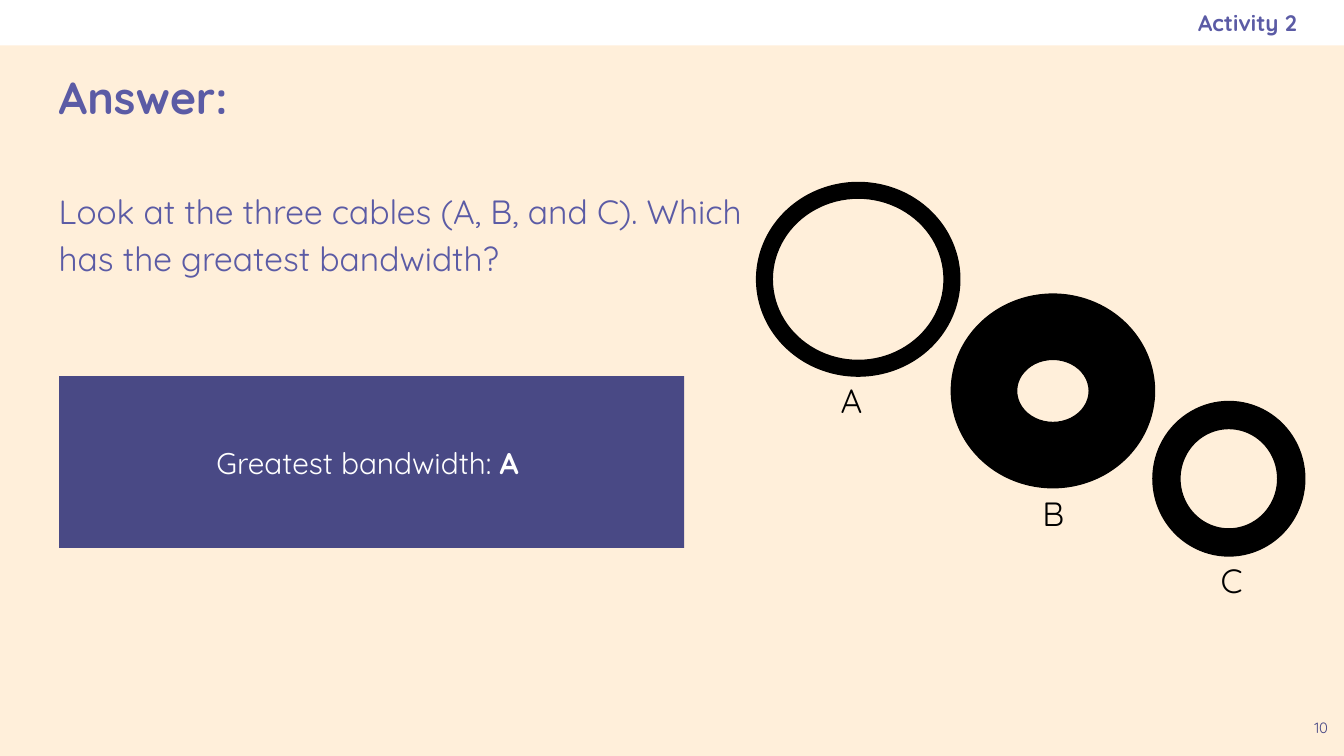
from dataclasses import dataclass

from pptx import Presentation
from pptx.dml.color import RGBColor
from pptx.enum.shapes import MSO_SHAPE
from pptx.enum.text import MSO_ANCHOR, PP_ALIGN
from pptx.util import Cm, Pt

RECTANGLE, DONUT = MSO_SHAPE.RECTANGLE, MSO_SHAPE.DONUT
TOP, MIDDLE = MSO_ANCHOR.TOP, MSO_ANCHOR.MIDDLE
LEFT, CENTER, RIGHT = PP_ALIGN.LEFT, PP_ALIGN.CENTER, PP_ALIGN.RIGHT


@dataclass(frozen=True)
class Theme:
    font: str = "Quicksand"
    cream: str = "FFEFDA"
    white: str = "FFFFFF"
    black: str = "000000"
    violet: str = "5B5BA5"
    indigo: str = "494985"
    title_size: int = 24
    body_size: int = 18
    answer_size: int = 16
    header_size: int = 12
    number_size: int = 8


class SlideBuilder:
    """Holds the theme and the current slide."""

    def __init__(self, slide, theme):
        self.slide = slide
        self.theme = theme
        background = slide.background.fill
        background.solid()
        background.fore_color.rgb = RGBColor.from_string(theme.cream)

    def shape(self, kind, box, color):
        shape = self.slide.shapes.add_shape(kind, *map(Cm, box))
        shape.shadow.inherit = False
        shape.fill.solid()
        shape.fill.fore_color.rgb = RGBColor.from_string(color)
        shape.line.fill.background()
        return shape

    def cable(self, box, wall):
        ring = self.shape(DONUT, box, self.theme.black)
        ring.adjustments[0] = wall
        ring.line.color.rgb = RGBColor.from_string(self.theme.black)
        ring.line.width = Pt(0.75)

    def fill_text(self, shape, text, size, color, align=LEFT, anchor=TOP,
                  bold=False, spacing=None, right_inset=0.25):
        frame = shape.text_frame
        frame.word_wrap = True
        frame.vertical_anchor = anchor
        frame.margin_left = frame.margin_top = frame.margin_bottom = Cm(0.25)
        frame.margin_right = Cm(right_inset)
        frame.text = text
        paragraph = frame.paragraphs[0]
        paragraph.alignment = align
        if spacing:
            paragraph.line_spacing = spacing
        for run in paragraph.runs:
            self.style(run, size, color, bold)
        return paragraph

    def style(self, run, size, color, bold):
        run.font.name = self.theme.font
        run.font.size = Pt(size)
        run.font.bold = bold
        run.font.color.rgb = RGBColor.from_string(color)

    def text(self, box, *args, **options):
        text_box = self.slide.shapes.add_textbox(*map(Cm, box))
        return self.fill_text(text_box, *args, **options)


def main():
    presentation = Presentation()
    presentation.slide_width, presentation.slide_height = Cm(25.4), Cm(14.29)
    theme = Theme()
    slide = presentation.slides.add_slide(presentation.slide_layouts[6])
    builder = SlideBuilder(slide, theme)

    # Header band, title and page number
    builder.shape(RECTANGLE, (0, 0, 25.4, 0.86), theme.white)
    builder.text((14.6, 0, 9.91, 0.86), "Activity 2", theme.header_size,
                 theme.violet, align=RIGHT, anchor=MIDDLE, bold=True,
                 right_inset=0)
    builder.text((0.86, 0.86, 23.67, 1.93), "Answer:", theme.title_size,
                 theme.violet, anchor=MIDDLE, bold=True)
    builder.text((24.54, 13.41, 0.86, 0.86), "10", theme.number_size,
                 theme.indigo, align=CENTER)

    # Question
    builder.text((0.86, 3.25, 13.44, 10.16),
                 "Look at the three cables (A, B, and C). "
                 "Which has the greatest bandwidth?",
                 theme.body_size, theme.violet, spacing=1.15)

    # Cables: ring box, wall thickness, label, label position
    cables = [
        ((14.3, 3.45, 3.84, 3.66), 0.081, "A", (15.27, 6.93)),
        ((17.98, 5.56, 3.84, 3.66), 0.337, "B", (19.08, 9.07)),
        ((21.79, 7.59, 2.87, 2.92), 0.178, "C", (22.45, 10.34)),
    ]
    for ring_box, wall, label, label_position in cables:
        builder.cable(ring_box, wall)
        builder.text((*label_position, 1.65, 0.86), label, theme.body_size,
                     theme.black, align=CENTER)

    # Answer panel
    panel = builder.shape(RECTANGLE, (1.12, 7.11, 11.81, 3.25), theme.indigo)
    paragraph = builder.fill_text(panel, "Greatest bandwidth: ",
                                  theme.answer_size, theme.white,
                                  align=CENTER, anchor=MIDDLE)
    answer = paragraph.add_run()
    answer.text = "A "
    builder.style(answer, theme.answer_size, theme.white, bold=True)

    presentation.save("out.pptx")


if __name__ == "__main__":
    main()
